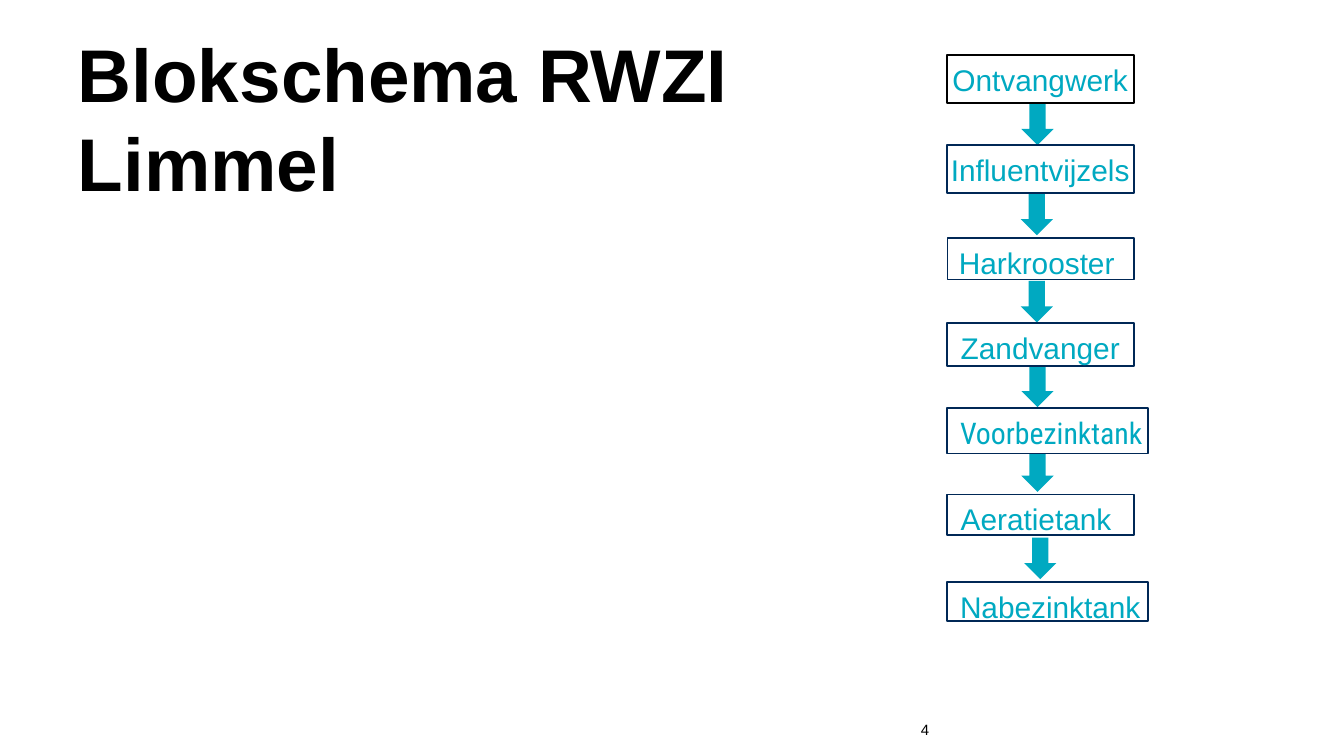
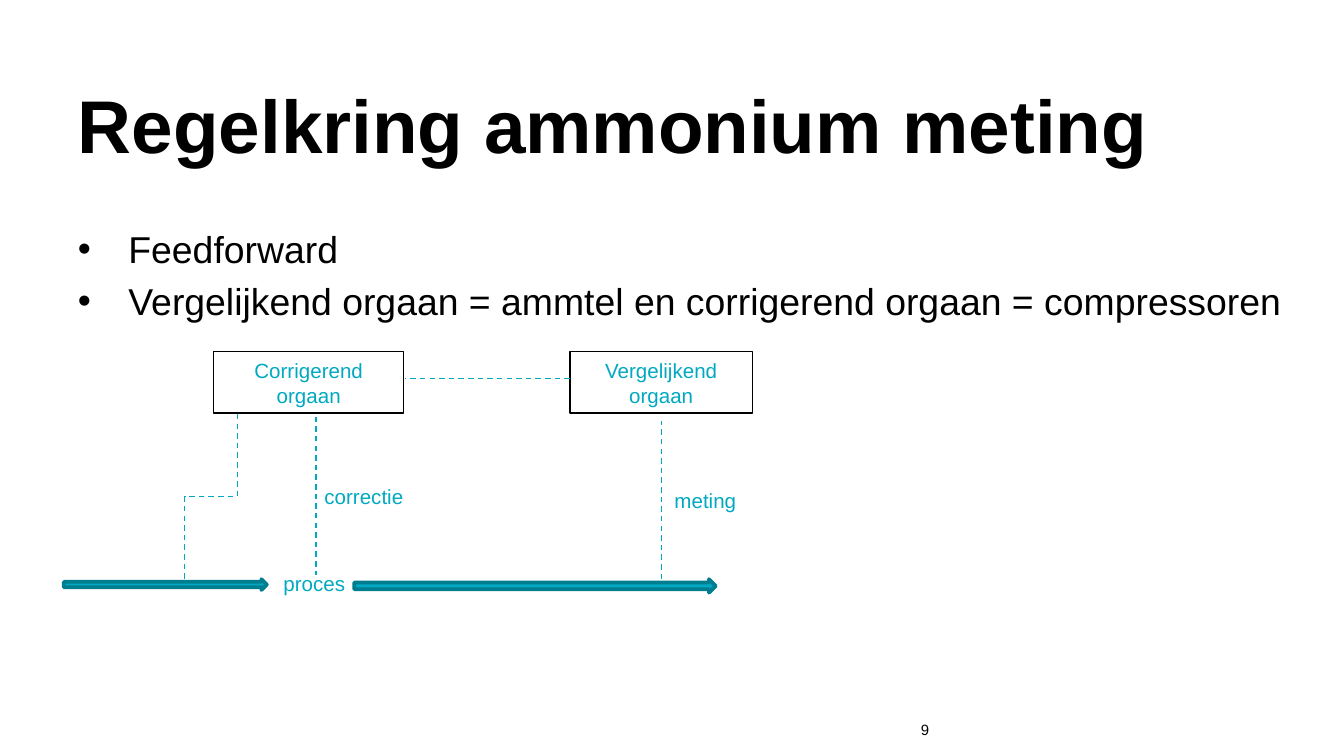
from pptx import Presentation
from pptx import util as u
from pptx.dml.color import RGBColor
from pptx.enum import dml, shapes, text
from pptx.oxml import ns
from lxml import etree

PX = 4572  # 200 px to the inch
BLACK = RGBColor(0x00, 0x00, 0x00)
WHITE = RGBColor(0xFF, 0xFF, 0xFF)
NAVY = RGBColor(0x00, 0x28, 0x56)
TEAL = RGBColor(0x00, 0xA9, 0xC1)
DARK_TEAL = RGBColor(0x00, 0x7D, 0x8F)
FONT = "Arial"
LEFT, CENTER, RIGHT = text.PP_ALIGN.LEFT, text.PP_ALIGN.CENTER, text.PP_ALIGN.RIGHT
TITLE_ONLY, TITLE_AND_BODY = 5, 1


def px(*lengths):
    return [u.Emu(length * PX) for length in lengths]


class Deck:
    def __init__(self):
        self.presentation = Presentation()
        self.presentation.slide_width, self.presentation.slide_height = px(2000, 1125)
        self.slide = None

    def new_slide(self, layout, title, title_box, number):
        layouts = self.presentation.slide_layouts
        self.slide = self.presentation.slides.add_slide(layouts[layout])
        shape = self.slide.shapes.title
        self.place(shape, title_box)
        shape.text_frame.text = title
        shape.text_frame.vertical_anchor = text.MSO_ANCHOR.MIDDLE
        self.format_text(shape, 40, BLACK, bold=True)
        page = self.label(number, (1289, 1072, 94, 32), 8, BLACK, RIGHT)
        frame = page.text_frame
        frame.margin_left = frame.margin_top = frame.margin_right = frame.margin_bottom = 0

    def place(self, shape, box):
        shape.left, shape.top, shape.width, shape.height = px(*box)

    def format_text(self, shape, size, color, align=LEFT, font=FONT, bold=False, wrap=True):
        frame = shape.text_frame
        frame.auto_size = text.MSO_AUTO_SIZE.NONE
        frame.word_wrap = wrap
        for paragraph in frame.paragraphs:
            paragraph.alignment = align
            for run in paragraph.runs:
                run.font.name = font
                run.font.size = u.Pt(size)
                run.font.bold = bold
                run.font.color.rgb = color

    def bullets(self, items, box, size):
        body = self.slide.placeholders[1]
        self.place(body, box)
        body.text_frame.text = "\n".join(items)
        for index, paragraph in enumerate(body.text_frame.paragraphs):
            properties = paragraph._p.get_or_add_pPr()
            indent = 75 * PX
            properties.set("marL", str(indent))
            properties.set("indent", str(-indent))
            bullet_color = etree.SubElement(properties, ns.qn("a:buClr"))
            etree.SubElement(bullet_color, ns.qn("a:srgbClr")).set("val", str(BLACK))
            etree.SubElement(properties, ns.qn("a:buChar")).set("char", "•")
            paragraph.space_before = u.Pt(4 if index else 0)
        self.format_text(body, size, BLACK)

    def label(self, words, box, size, color, align=LEFT, wrap=True):
        shape = self.slide.shapes.add_textbox(*px(*box))
        shape.text_frame.text = words
        self.format_text(shape, size, color, align, wrap=wrap)
        return shape

    def shape(self, kind, box, fill, line=None, width=1):
        shape = self.slide.shapes.add_shape(kind, *px(*box))
        shape.shadow.inherit = False
        shape.fill.solid()
        shape.fill.fore_color.rgb = fill
        if line is None:
            shape.line.fill.background()
        else:
            shape.line.color.rgb = line
            shape.line.width = u.Pt(width)
        return shape

    def block(self, words, box, size, line, width=1, align=CENTER, font=FONT, wrap=True):
        shape = self.shape(shapes.MSO_SHAPE.RECTANGLE, box, WHITE, line, width)
        shape.text_frame.text = words
        shape.text_frame.vertical_anchor = text.MSO_ANCHOR.TOP
        self.format_text(shape, size, TEAL, align, font, wrap=wrap)

    def dashed(self, start, end, kind=shapes.MSO_CONNECTOR.STRAIGHT, quarter_turn=False):
        connector = self.slide.shapes.add_connector(kind, *px(*start, *end))
        connector.line.color.rgb = TEAL
        connector.line.width = u.Pt(0.75)
        connector.line.dash_style = dml.MSO_LINE.DASH
        properties = connector._element.spPr
        etree.SubElement(properties, ns.qn("a:effectLst"))
        if quarter_turn:
            properties.find(ns.qn("a:xfrm")).set("rot", "5400000")


def block_diagram(deck):
    deck.new_slide(TITLE_ONLY, "Blokschema RWZI Limmel", (96, 84, 1288, 180), "4")

    # Arrows between the treatment steps
    for left, top in ((1520, 154), (1519, 288), (1519, 418),
                      (1520, 544), (1520, 670), (1524, 800)):
        deck.shape(shapes.MSO_SHAPE.DOWN_ARROW, (left, top, 48, 62), TEAL)

    # Treatment steps from top to bottom
    steps = (
        ("Ontvangwerk", (1409, 82, 278, 72), BLACK, CENTER, FONT),
        ("Influentvijzels", (1409, 216, 278, 72), NAVY, CENTER, FONT),
        ("Harkrooster ", (1410, 354, 278, 62), NAVY, CENTER, FONT),
        ("Zandvanger", (1409, 481, 278, 64), NAVY, CENTER, FONT),
        ("Voorbezinktank", (1409, 607, 300, 68), NAVY, LEFT, "Roboto Condensed"),
        ("Aeratietank ", (1409, 736, 278, 60), NAVY, CENTER, FONT),
        ("Nabezinktank", (1409, 866, 300, 58), NAVY, LEFT, FONT),
    )
    for words, box, line, align, font in steps:
        deck.block(words, box, 16, line, align=align, font=font, wrap=False)


def control_loop(deck):
    deck.new_slide(TITLE_AND_BODY, "Regelkring ammonium meting", (96, 104, 1810, 160), "9")
    deck.bullets(
        ("Feedforward",
         "Vergelijkend orgaan = ammtel en corrigerend orgaan = compressoren"),
        (96, 326, 1850, 572), 20)

    # Process flow and control units
    arrow = shapes.MSO_SHAPE.RIGHT_ARROW
    deck.block("Corrigerend orgaan", (318, 523, 283, 92), 11, BLACK, 0.75)
    deck.shape(arrow, (95, 862, 302, 16), TEAL, DARK_TEAL, 2)
    deck.block("proces", (402, 840, 138, 58), 11, WHITE, 0.75, LEFT)
    deck.shape(arrow, (527, 862, 538, 20), TEAL, DARK_TEAL, 2)
    deck.block("Vergelijkend orgaan", (848, 523, 272, 92), 11, BLACK, 0.75)

    # Signal lines
    deck.dashed((470, 620), (470, 856))
    deck.dashed((848, 563), (602, 563))
    deck.dashed((984, 862), (984, 626))
    deck.dashed((191, 700), (437, 778), shapes.MSO_CONNECTOR.ELBOW, quarter_turn=True)

    # Signal names
    deck.label("meting", (984, 716, 200, 58), 11, TEAL)
    deck.label("correctie", (463, 710, 158, 58), 11, TEAL, wrap=False)


def main():
    deck = Deck()
    block_diagram(deck)
    control_loop(deck)
    deck.presentation.save("out.pptx")


if __name__ == "__main__":
    main()
